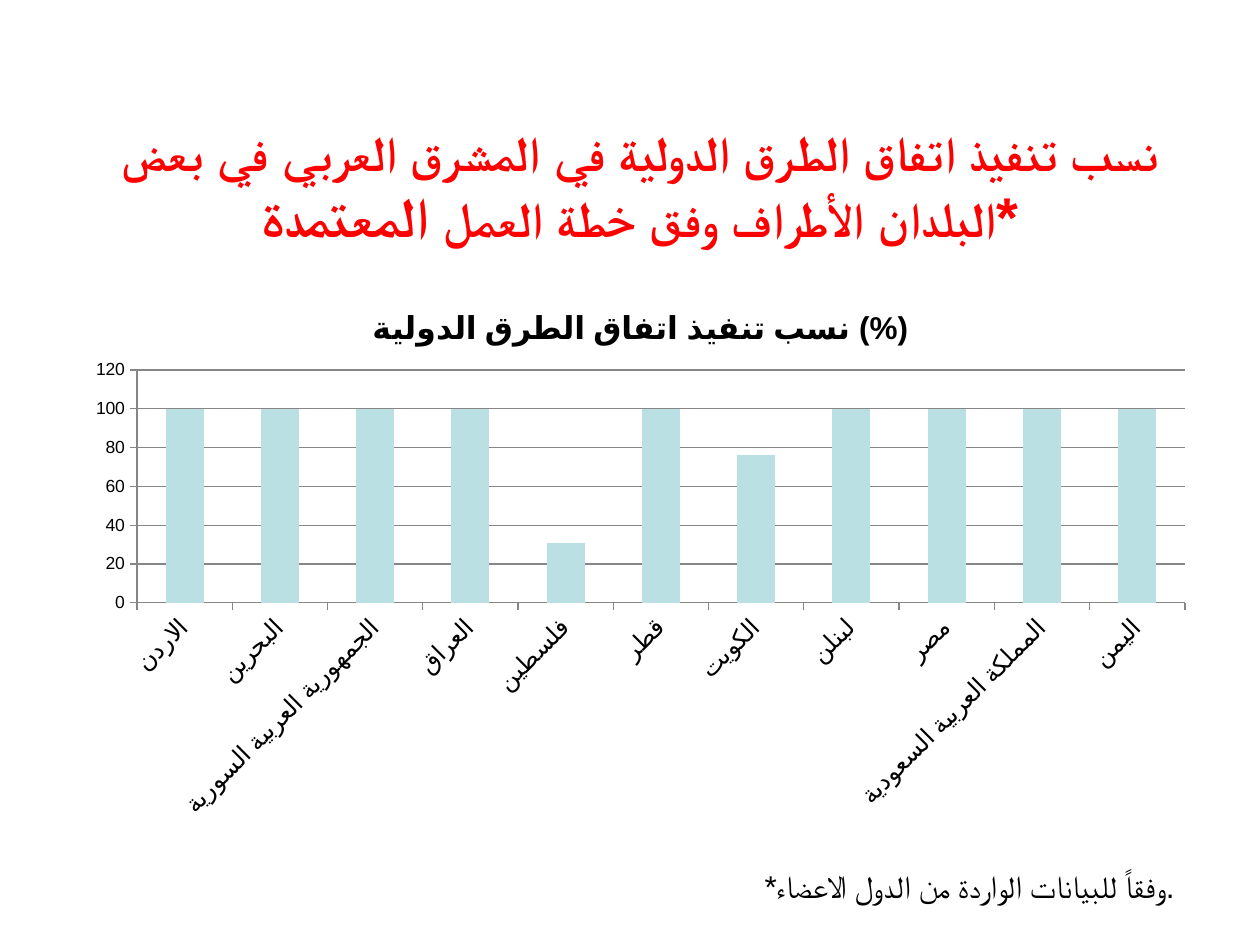
import dataclasses
import pptx
import pptx.chart.data
import pptx.dml.color
import pptx.enum.chart
import pptx.enum.text
import pptx.oxml
import pptx.oxml.ns
import pptx.util

EMU_PER_PX = 914400 / 126
FONT = "Arial"
BLACK, RED, AQUA, GREY = "000000", "FF0000", "BBE0E3", "868686"
ALIGN = pptx.enum.text.PP_ALIGN


@dataclasses.dataclass(frozen=True)
class Box:
    """A rectangle in px."""
    left: int
    top: int
    width: int
    height: int

    def emu(self) -> list[int]:
        """Return the sides in EMU."""
        return [px(side) for side in dataclasses.astuple(self)]


@dataclasses.dataclass(frozen=True)
class Country:
    """A country and its implementation rate in percent."""
    name: str
    rate: int


HEADING_BOX = Box(73, 116, 1134, 158)
CHART_BOX = Box(73, 284, 1134, 546)
PLOT_BOX = Box(137, 370, 1048, 233)
FOOTNOTE_BOX = Box(158, 861, 1029, 50)

COUNTRIES = [
    Country("الاردن", 100),
    Country("البحرين", 100),
    Country("الجمهورية العربية السورية", 100),
    Country("العراق", 100),
    Country("فلسطين", 31),
    Country("قطر", 100),
    Country("الكويت", 76),
    Country("لبنلن", 100),
    Country("مصر", 100),
    Country("المملكة العربية السعودية", 100),
    Country("اليمن", 100),
]


def px(length: int) -> int:
    """Convert px to EMU."""
    return round(length * EMU_PER_PX)


def color(code: str) -> pptx.dml.color.RGBColor:
    """Convert a hex string to a colour."""
    return pptx.dml.color.RGBColor.from_string(code)


def style(font, *, size: int, fill: str = BLACK, bold: bool = False) -> None:
    """Set the face, size, colour and weight of a font."""
    font.name = FONT
    font.size = pptx.util.Pt(size)
    font.bold = bold
    font.color.rgb = color(fill)


def add_text(slide, box: Box, parts: list[tuple[str, int]], *, align,
             fill: str = BLACK, bold: bool = False) -> None:
    """Add one paragraph made of (text, size) parts."""
    frame = slide.shapes.add_textbox(*box.emu()).text_frame
    frame.word_wrap = True
    frame.vertical_anchor = pptx.enum.text.MSO_ANCHOR.TOP
    paragraph = frame.paragraphs[0]
    paragraph.alignment = align
    for text, size in parts:
        run = paragraph.add_run()
        run.text = text
        style(run.font, size=size, fill=fill, bold=bold)


def place_plot(chart) -> None:
    """Fix the inner plot area inside the chart."""
    fractions = {
        "x": (PLOT_BOX.left - CHART_BOX.left) / CHART_BOX.width,
        "y": (PLOT_BOX.top - CHART_BOX.top) / CHART_BOX.height,
        "w": PLOT_BOX.width / CHART_BOX.width,
        "h": PLOT_BOX.height / CHART_BOX.height,
    }
    modes = '<c:xMode val="edge"/><c:yMode val="edge"/>'
    sides = "".join(f'<c:{side} val="{part:.4f}"/>' for side, part in fractions.items())
    layout = pptx.oxml.parse_xml(
        f'<c:layout {pptx.oxml.ns.nsdecls("c")}><c:manualLayout>'
        f'<c:layoutTarget val="inner"/>{modes}{sides}</c:manualLayout></c:layout>')
    plot_area = chart.plots[0]._element.getparent()
    for old in plot_area.findall(pptx.oxml.ns.qn("c:layout")):
        plot_area.remove(old)
    plot_area.insert(0, layout)


def style_axis(axis, size: int) -> None:
    """Give an axis its line, ticks and label font."""
    axis.format.line.color.rgb = color(GREY)
    axis.major_tick_mark = pptx.enum.chart.XL_TICK_MARK.OUTSIDE
    axis.minor_tick_mark = pptx.enum.chart.XL_TICK_MARK.NONE
    style(axis.tick_labels.font, size=size)


def add_rates_chart(slide, countries: list[Country]) -> None:
    """Draw the implementation rates as columns."""
    rates = pptx.chart.data.CategoryChartData()
    rates.categories = [country.name for country in countries]
    rates.add_series("Series 1", [country.rate for country in countries])
    chart = slide.shapes.add_chart(
        pptx.enum.chart.XL_CHART_TYPE.COLUMN_CLUSTERED, *CHART_BOX.emu(), rates).chart
    style(chart.font, size=10)
    chart.has_legend = False
    chart.has_title = True
    chart.chart_title.include_in_layout = False
    caption = chart.chart_title.text_frame.paragraphs[0].add_run()
    caption.text = "نسب تنفيذ اتفاق الطرق الدولية (%)"
    style(caption.font, size=18, bold=True)

    columns = chart.plots[0]
    columns.gap_width = 150
    columns.vary_by_categories = False
    columns.series[0].format.fill.solid()
    columns.series[0].format.fill.fore_color.rgb = color(AQUA)

    style_axis(chart.category_axis, 14)
    style_axis(chart.value_axis, 10)
    label_body = chart.category_axis._element.find(
        f'{pptx.oxml.ns.qn("c:txPr")}/{pptx.oxml.ns.qn("a:bodyPr")}')
    label_body.set("rot", "-2700000")
    label_body.set("vert", "horz")
    scale = chart.value_axis
    scale.minimum_scale, scale.maximum_scale, scale.major_unit = 0, 120, 20
    scale.has_major_gridlines = True
    scale.major_gridlines.format.line.color.rgb = color(GREY)
    place_plot(chart)


def main() -> None:
    """Build and save the slide."""
    deck = pptx.Presentation()
    deck.slide_width, deck.slide_height = px(1260), px(945)
    slide = deck.slides.add_slide(deck.slide_layouts[6])
    heading = [
        ("نسب تنفيذ اتفاق الطرق الدولية في المشرق العربي "
         "في بعض البلدان الأطراف وفق خطة العمل ", 28),
        ("المعتمدة*", 32),
    ]
    add_text(slide, HEADING_BOX, heading, align=ALIGN.CENTER, fill=RED, bold=True)
    add_rates_chart(slide, COUNTRIES)
    footnote = [("*وفقاً للبيانات الواردة من الدول الاعضاء.", 18)]
    add_text(slide, FOOTNOTE_BOX, footnote, align=ALIGN.RIGHT)
    deck.save("out.pptx")


if __name__ == "__main__":
    main()
